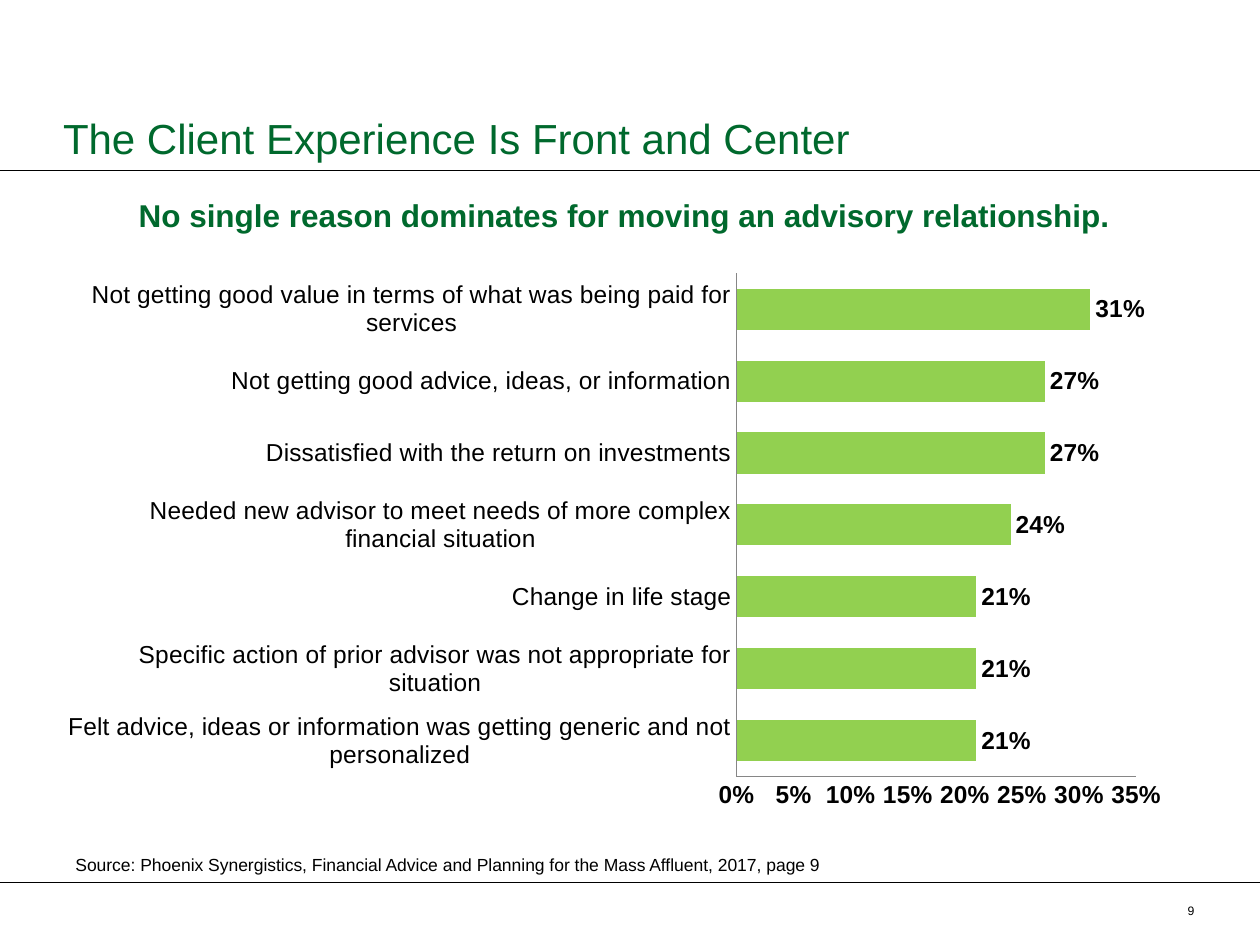
from lxml.etree import SubElement
from pptx import Presentation
from pptx.chart.data import CategoryChartData
from pptx.dml.color import RGBColor
from pptx.enum.chart import XL_CHART_TYPE, XL_LABEL_POSITION, XL_TICK_MARK
from pptx.enum.shapes import MSO_CONNECTOR
from pptx.enum.text import MSO_ANCHOR, PP_ALIGN
from pptx.oxml.ns import qn
from pptx.util import Inches, Pt

GREEN, LIME, BLACK, GRAY = "00692D", "92D050", "000000", "868686"
TITLE = "The Client Experience Is Front and Center"
CLAIM = "No single reason dominates for moving an advisory relationship."
SOURCE = ("Source: Phoenix Synergistics, Financial Advice and Planning "
          "for the Mass Affluent, 2017, page 9")
REASONS = [
    ("Felt advice, ideas or information was getting generic and not personalized", 0.21),
    ("Specific action of prior advisor was not appropriate for situation", 0.21),
    ("Change in life stage", 0.21),
    ("Needed new advisor to meet needs of more complex financial situation", 0.24),
    ("Dissatisfied with the return on investments", 0.27),
    ("Not getting good advice, ideas, or information", 0.27),
    ("Not getting good value in terms of what was being paid for services", 0.31),
]
RULES = [1.35, 7]
PLOT = {"x": 0.6, "y": 0.02, "w": 0.36, "h": 0.9}


def paint(target, color):
    """Give a font or fill a solid colour."""
    fill = target.fill if hasattr(target, "fill") else target
    fill.solid()
    fill.fore_color.rgb = RGBColor.from_string(color)


def style(font, size, color=BLACK, bold=False):
    """Set the face, size, colour and weight of a font."""
    font.name, font.size, font.bold = "Arial", Pt(size), bold
    paint(font, color)


def place(shape, box):
    """Move and size a shape by inches."""
    shape.left, shape.top, shape.width, shape.height = map(Inches, box)


def write(shape, text, size, color=BLACK, bold=False, align=PP_ALIGN.LEFT, pads=None):
    """Fill a shape with one styled paragraph."""
    frame = shape.text_frame
    frame.word_wrap = True
    if pads:
        (frame.margin_left, frame.margin_top,
         frame.margin_right, frame.margin_bottom) = map(Inches, pads)
    para = frame.paragraphs[0]
    para.text, para.alignment = text, align
    style(para.font, size, color, bold)
    return para


def label(slide, box, *args, **opts):
    """Add a text box."""
    write(slide.shapes.add_textbox(*map(Inches, box)), *args, **opts)


def rule(slide, y):
    """Draw a thin line across the slide."""
    line = slide.shapes.add_connector(
        MSO_CONNECTOR.STRAIGHT, 0, Inches(y), Inches(10), Inches(y))
    paint(line.line, BLACK)
    line.line.width = Pt(0.25)
    SubElement(line._element.spPr, qn("a:effectLst"))


def graph(slide, box):
    """Add the bar chart of reasons."""
    data = CategoryChartData(number_format="0%")
    data.categories = [name for name, _ in REASONS]
    data.add_series("Series 1", [share for _, share in REASONS])
    chart = slide.shapes.add_chart(
        XL_CHART_TYPE.BAR_CLUSTERED, *map(Inches, box), data).chart
    chart.has_legend = chart.has_title = False
    style(chart.font, 18)
    for axis, bold in ((chart.category_axis, False), (chart.value_axis, True)):
        axis.major_tick_mark = axis.minor_tick_mark = XL_TICK_MARK.NONE
        axis.has_major_gridlines = False
        style(axis.tick_labels.font, 14, BLACK, bold)
        paint(axis.format.line, GRAY)
        axis.format.line.width = Pt(0.75)
    axis.minimum_scale, axis.maximum_scale, axis.major_unit = 0, 0.35, 0.05
    axis.tick_labels.number_format = "0%"
    axis.tick_labels.number_format_is_linked = False

    plot = chart.plots[0]
    plot.gap_width, plot.vary_by_categories = 75, False
    bars = plot.series[0]
    paint(bars.format, LIME)
    tags = bars.data_labels
    tags.show_value, tags.position = True, XL_LABEL_POSITION.OUTSIDE_END
    tags.number_format, tags.number_format_is_linked = "0%", False
    style(tags.font, 14, BLACK, True)

    area = chart._chartSpace.chart.plotArea
    frame = area.find(qn("c:layout"))
    if frame is None:
        frame = SubElement(area, qn("c:layout"))
        area.insert(0, frame)
    inner = SubElement(frame, qn("c:manualLayout"))
    parts = [("layoutTarget", "inner"), ("xMode", "edge"), ("yMode", "edge")]
    for key, value in parts + list(PLOT.items()):
        SubElement(inner, qn("c:" + key)).set("val", str(value))


def main():
    """Build and save the slide."""
    deck = Presentation()
    deck.slide_width, deck.slide_height = Inches(10), Inches(7.5)
    slide = deck.slides.add_slide(deck.slide_layouts[5])
    for y in RULES:
        rule(slide, y)
    title = slide.shapes.title
    place(title, (0.5, 0.55, 9, 0.79))
    write(title, TITLE, 24, GREEN, pads=(0, 0, 0, 0.05)).line_spacing = Pt(28)
    title.text_frame.vertical_anchor = MSO_ANCHOR.BOTTOM
    label(slide, (0.83, 1.51, 8.25, 0.4), CLAIM, 18, GREEN, True, PP_ALIGN.CENTER)
    graph(slide, (0.54, 2.08, 8.83, 4.44))
    label(slide, (0.5, 6.73, 8.58, 0.27), SOURCE, 10)
    label(slide, (9.08, 7.17, 0.4, 0.3), "9", 7, align=PP_ALIGN.RIGHT, pads=(0, 0, 0, 0))
    deck.save("out.pptx")


if __name__ == "__main__":
    main()
